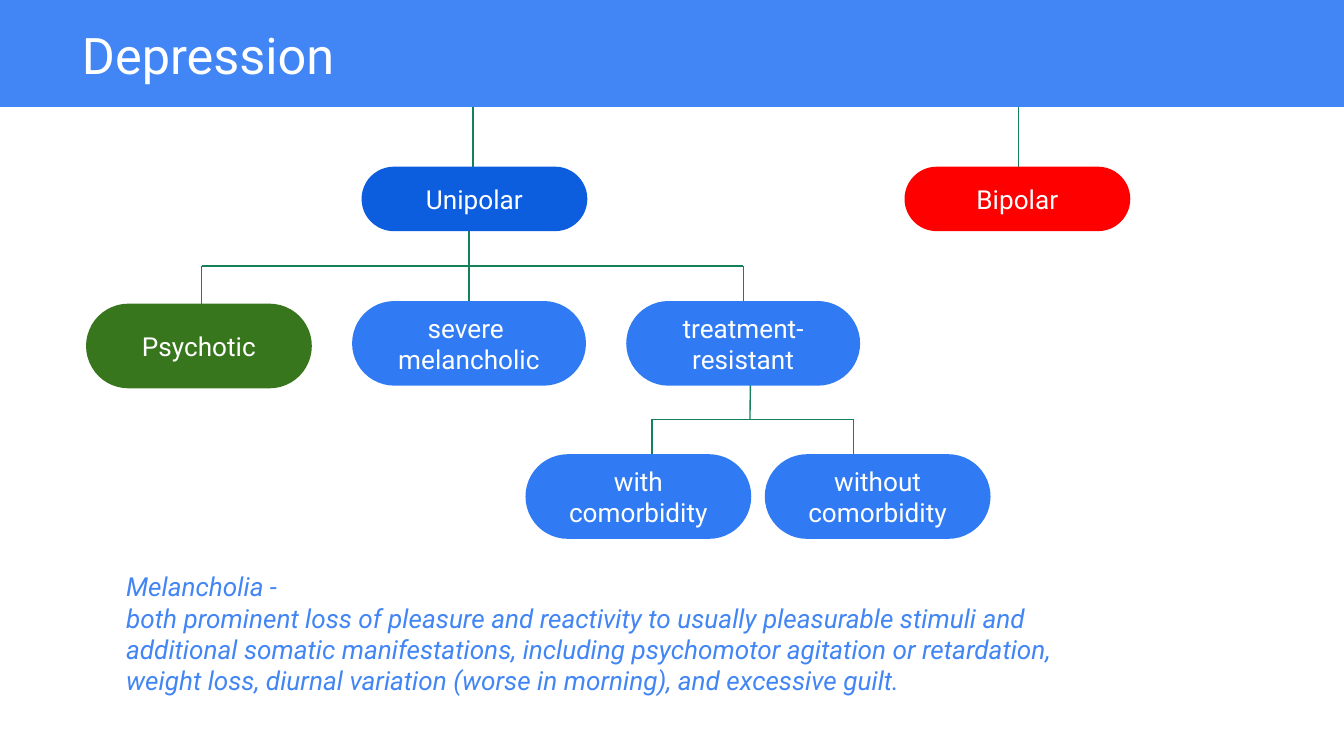
from pptx import Presentation
from pptx.dml.color import RGBColor
from pptx.enum import shapes, text
from pptx.oxml.ns import qn
from pptx.util import Inches, Pt
from lxml import etree

THEME = {
    "font": "Roboto", "title_size": 27, "body_size": 14, "line_width": 0.75,
    "white": "FFFFFF", "band": "4285F4", "branch": "158158", "unipolar": "0D5DDF",
    "bipolar": "FF0000", "psychotic": "38761D", "subtype": "307BF3",
}

# Content
TITLE = "Depression"
DEFINITION = [
    "Melancholia -",
    "both prominent loss of pleasure and reactivity to usually pleasurable stimuli and "
    "additional somatic manifestations, including psychomotor agitation or retardation, "
    "weight loss, diurnal variation (worse in morning), and excessive guilt.",
]
BAND_HEIGHT = 0.79
TYPE_TOP, SUBTYPE_TOP, COMORBIDITY_TOP = 1.24, 2.24, 3.38
TYPE_SIZE, NODE_SIZE, WIDE_SIZE = (1.68, 0.48), (1.68, 0.63), (1.74, 0.63)

# Paragraphs, left, top, (width, height), colour
NODES = [
    (["Psychotic"], 0.64, SUBTYPE_TOP + 0.02, NODE_SIZE, "psychotic"),
    (["treatment-", "resistant"], 4.66, SUBTYPE_TOP, WIDE_SIZE, "subtype"),
    (["with comorbidity"], 3.91, COMORBIDITY_TOP, NODE_SIZE, "subtype"),
    (["without comorbidity"], 5.69, COMORBIDITY_TOP, NODE_SIZE, "subtype"),
    (["Bipolar"], 6.73, TYPE_TOP, TYPE_SIZE, "bipolar"),
    (["Unipolar"], 2.69, TYPE_TOP, TYPE_SIZE, "unipolar"),
    (["severe ", "melancholic"], 2.62, SUBTYPE_TOP, WIDE_SIZE, "subtype"),
]

# Branches: start x, start y, end x, end y; ends tuck behind the band and nodes
BAR_Y, LOWER_BAR_Y = 1.98, 3.12
BRANCHES = [
    (7.58, 0.28, 7.58, 1.53),
    (5.53, BAR_Y, 1.5, BAR_Y),
    (3.52, 0.54, 3.52, 1.49),
    (3.49, 1.49, 3.49, 2.79),
    (6.35, LOWER_BAR_Y, 4.85, LOWER_BAR_Y),
    (4.85, LOWER_BAR_Y, 4.85, 3.68),
    (5.59, 2.37, 5.58, LOWER_BAR_Y),
    (6.35, LOWER_BAR_Y, 6.35, 3.67),
    (1.5, BAR_Y, 1.5, 2.52),
    (5.53, BAR_Y, 5.53, 2.5),
]


def color(name):
    return RGBColor.from_string(THEME[name])


def write(shape, lines, size, ink, anchor, align, italic=None):
    frame = shape.text_frame
    margins = {f"margin_{side}": Inches(0.1) for side in ("left", "right", "top", "bottom")}
    settings = {"word_wrap": True, "auto_size": text.MSO_AUTO_SIZE.NONE,
                "vertical_anchor": anchor, **margins}
    for key, value in settings.items():
        setattr(frame, key, value)
    frame.text = "\n".join(lines)
    for paragraph in frame.paragraphs:
        paragraph.alignment = align
        font_format = {"name": THEME["font"], "size": Pt(THEME[size]), "italic": italic}
        for key, value in font_format.items():
            setattr(paragraph.font, key, value)
        paragraph.font.color.rgb = color(ink)


def add_block(slide, kind, box, fill):
    block = slide.shapes.add_shape(kind, *map(Inches, box))
    block.shadow.inherit = False
    block.fill.solid()
    block.fill.fore_color.rgb = color(fill)
    block.line.fill.background()
    return block


def add_branch(slide, ends):
    branch = slide.shapes.add_connector(shapes.MSO_CONNECTOR.STRAIGHT, *map(Inches, ends))
    branch.line.color.rgb = color("branch")
    branch.line.width = Pt(THEME["line_width"])
    etree.SubElement(branch._element.spPr, qn("a:effectLst"))


def main():
    prs = Presentation()
    prs.slide_width = Inches(10)
    prs.slide_height = prs.slide_width * 9 // 16
    slide = prs.slides.add_slide(prs.slide_layouts[5])

    # Branches
    for ends in BRANCHES:
        add_branch(slide, ends)

    # Nodes
    for lines, left, top, size, fill in NODES:
        node = add_block(slide, shapes.MSO_SHAPE.ROUNDED_RECTANGLE, (left, top, *size), fill)
        node.adjustments[0] = 0.5
        write(node, lines, "body_size", "white", text.MSO_ANCHOR.MIDDLE, text.PP_ALIGN.CENTER)

    # Title band, with the title in front of it
    band = add_block(slide, shapes.MSO_SHAPE.RECTANGLE, (0, 0, 10, BAND_HEIGHT), "band")
    band.line.color.rgb = color("band")
    band.line.width = Pt(THEME["line_width"])
    title = slide.shapes.title
    band._element.addnext(title._element)
    title.left, title.top, title.width, title.height = map(Inches, (0.51, -0.11, 8.99, 0.84))
    write(title, [TITLE], "title_size", "white", text.MSO_ANCHOR.BOTTOM, text.PP_ALIGN.LEFT)

    # Definition
    definition = slide.shapes.add_textbox(*map(Inches, (0.84, 4.44, 7.67, 0.84)))
    write(definition, DEFINITION, "body_size", "band", text.MSO_ANCHOR.BOTTOM,
          text.PP_ALIGN.LEFT, italic=True)

    prs.save("out.pptx")


if __name__ == "__main__":
    main()
